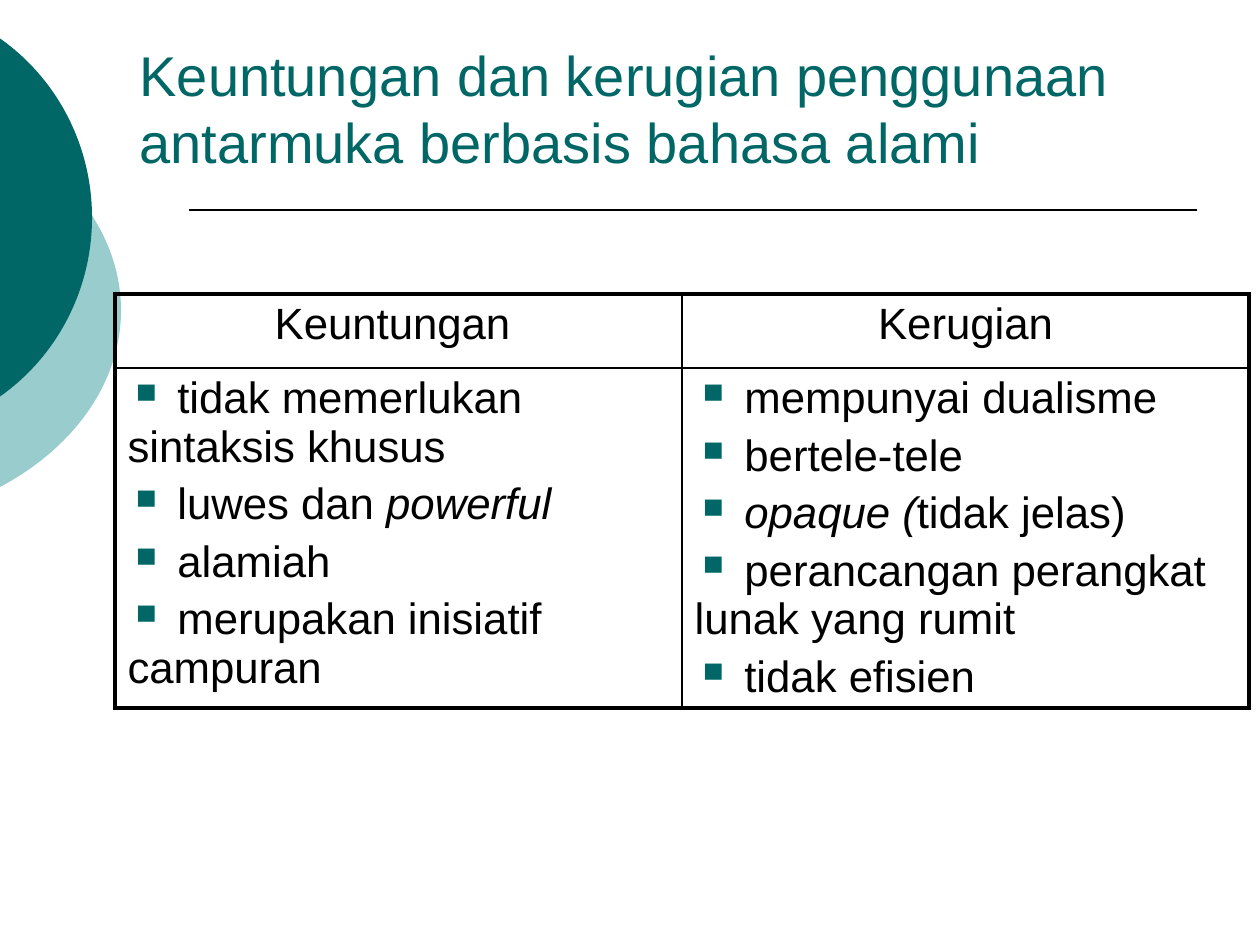
from lxml import etree
from pptx import Presentation
from pptx.dml.color import RGBColor
from pptx.enum.shapes import MSO_CONNECTOR as Connector, MSO_SHAPE as Shape
from pptx.enum.text import MSO_ANCHOR as Anchor, MSO_AUTO_SIZE as AutoSize, PP_ALIGN as Align
from pptx.oxml.ns import qn
from pptx.util import Pt

EMU_PER_PX = 914400 / 126


def px(length):
    return round(length * EMU_PER_PX)


def color(hex_string):
    return RGBColor.from_string(hex_string)


def add_element(parent, tag, **attributes):
    return etree.SubElement(parent, qn(tag), attributes)


class SlideBuilder:
    FONT, BULLET_FONT = "Arial", "OpenSymbol"
    DARK, LIGHT, BLACK = "006666", "99CCCC", "000000"
    TITLE_SIZE, TABLE_SIZE = 32, 25
    THICK, THIN = 2.25, 1

    def __init__(self, presentation):
        self.slide = presentation.slides.add_slide(presentation.slide_layouts[5])

    def style(self, paragraph, size, hex_string):
        font = paragraph.font
        font.name, font.size = self.FONT, Pt(size)
        font.color.rgb = color(hex_string)

    def title(self, text, left, top, width, height):
        shape = self.slide.shapes.title
        shape.left, shape.top, shape.width, shape.height = map(px, (left, top, width, height))
        frame = shape.text_frame
        frame.text = text
        frame.word_wrap, frame.auto_size = True, AutoSize.NONE
        frame.vertical_anchor = Anchor.MIDDLE
        paragraph = frame.paragraphs[0]
        paragraph.alignment = Align.LEFT
        self.style(paragraph, self.TITLE_SIZE, self.DARK)

    def disc(self, left, top, width, height, hex_string):
        shape = self.slide.shapes.add_shape(Shape.OVAL, *map(px, (left, top, width, height)))
        shape.shadow.inherit = False
        shape.fill.solid()
        shape.fill.fore_color.rgb = color(hex_string)
        shape.line.fill.background()

    def rule(self, left, right, y):
        line = self.slide.shapes.add_connector(
            Connector.STRAIGHT, px(left), px(y), px(right), px(y))
        line.line.color.rgb = color(self.BLACK)
        line.line.width = Pt(self.THIN)
        add_element(line._element.spPr, "a:effectLst")

    def bullet(self, paragraph):
        properties = paragraph._p.get_or_add_pPr()
        properties.set("marL", "0")
        properties.set("indent", "0")
        bullet_color = add_element(properties, "a:buClr")
        add_element(bullet_color, "a:srgbClr", val=self.DARK)
        add_element(properties, "a:buSzPct", val="115000")
        add_element(properties, "a:buFont", typeface=self.BULLET_FONT)
        add_element(properties, "a:buChar", char="▪")

    def borders(self, cell, widths):
        properties = cell._tc.get_or_add_tcPr()
        for side, width in zip("LRTB", widths):
            line = add_element(properties, f"a:ln{side}", w=str(Pt(width)))
            fill = add_element(line, "a:solidFill")
            add_element(fill, "a:srgbClr", val=self.BLACK)

    def cell_text(self, cell, items, is_header):
        frame = cell.text_frame
        for index, runs in enumerate(items):
            paragraph = frame.add_paragraph() if index else frame.paragraphs[0]
            paragraph.space_before = Pt(self.TABLE_SIZE * 0.2)
            paragraph.alignment = Align.CENTER if is_header else Align.LEFT
            if not is_header:
                self.bullet(paragraph)
            self.style(paragraph, self.TABLE_SIZE, self.BLACK)
            for text, is_italic in runs:
                run = paragraph.add_run()
                run.text = text
                if is_italic:
                    run.font.italic = True

    def table(self, rows, left, top, column_width, row_heights):
        row_count, column_count = len(rows), len(rows[0])
        table = self.slide.shapes.add_table(
            row_count, column_count, px(left), px(top),
            px(column_width * column_count), px(sum(row_heights))).table
        table.first_row = table.horz_banding = False
        for column in table.columns:
            column.width = px(column_width)
        for r, (row, height) in enumerate(zip(rows, row_heights)):
            table.rows[r].height = px(height)
            for c, items in enumerate(row):
                cell = table.cell(r, c)
                outer_sides = (c == 0, c == column_count - 1, r == 0, r == row_count - 1)
                self.borders(cell, [self.THICK if outer else self.THIN for outer in outer_sides])
                cell.fill.background()
                self.cell_text(cell, items, is_header=r == 0)


def plain(text):
    return [(text, False)]


ADVANTAGES = [
    plain(" tidak memerlukan sintaksis khusus"),
    [(" luwes dan ", False), ("powerful", True)],
    plain(" alamiah"),
    plain(" merupakan inisiatif campuran"),
]
DRAWBACKS = [
    plain(" mempunyai dualisme"),
    plain(" bertele-tele"),
    [(" ", False), ("opaque (", True), ("tidak jelas)", False)],
    plain(" perancangan perangkat lunak yang rumit"),
    plain(" tidak efisien"),
]


def main():
    presentation = Presentation()
    presentation.slide_width, presentation.slide_height = px(1260), px(945)
    builder = SlideBuilder(presentation)

    # Decoration: two discs reaching in from the left, and the rule under the title
    builder.disc(-446, 95, 567, 431, builder.LIGHT)
    builder.disc(-334, 0, 426, 435, builder.DARK)
    builder.rule(189, 1197, 210)

    # Title
    builder.title("Keuntungan dan kerugian penggunaan antarmuka berbasis bahasa alami",
                  127, 53, 1081, 110)

    # Comparison table
    header = [[plain("Keuntungan ")], [plain("Kerugian")]]
    builder.table([header, [ADVANTAGES, DRAWBACKS]], 115, 294, 567, (74, 310))

    presentation.save("out.pptx")


if __name__ == "__main__":
    main()
